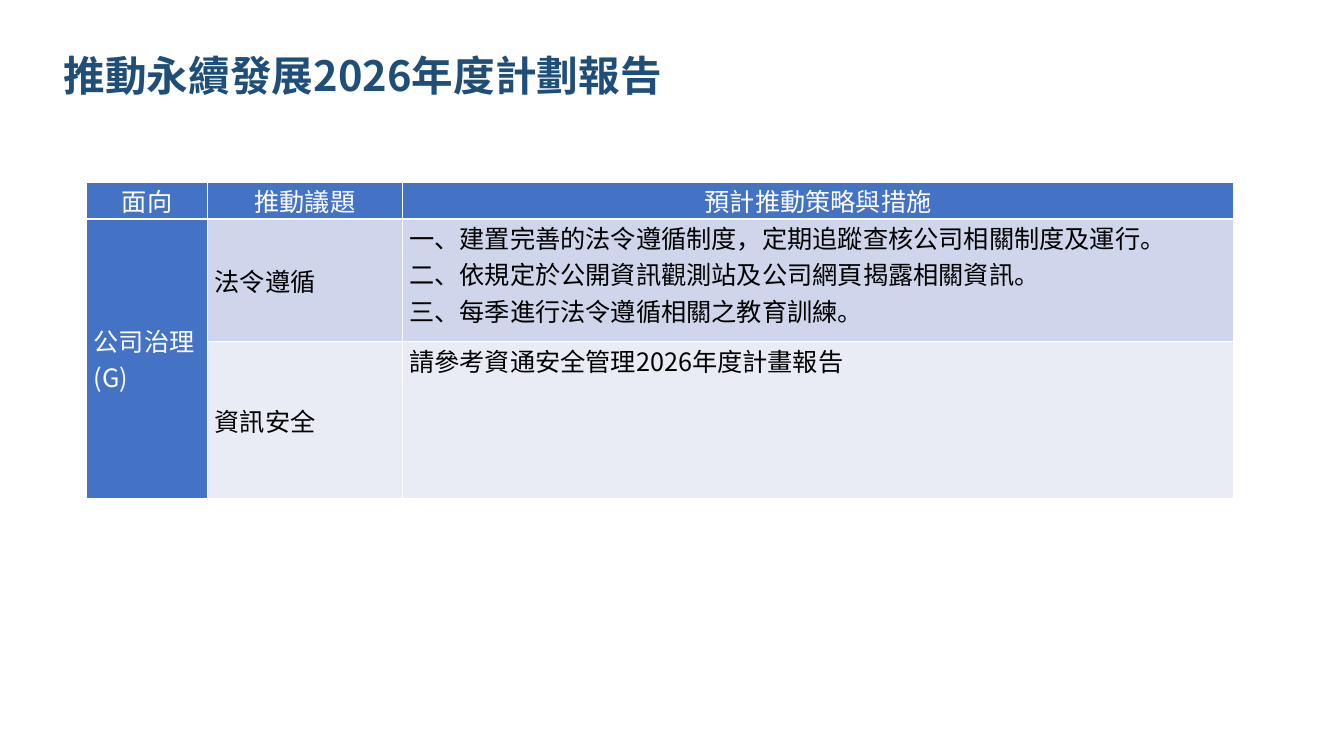
from lxml.etree import SubElement
from pptx import Presentation
from pptx.dml.color import RGBColor
from pptx.enum.text import MSO_ANCHOR as ANCHOR, MSO_AUTO_SIZE as AUTO, PP_ALIGN as ALIGN
from pptx.oxml.ns import qn
from pptx.util import Inches, Pt

FONT = "Noto Sans CJK SC"
WHITE, BLACK, NAVY, BLUE = "FFFFFF", "000000", "1F4E79", "4472C4"
COLUMNS = (1.2, 1.93, 8.25)
ROWS = (0.32, 1.22, 1.55)
BANDS = (BLUE, "CFD5EA", "E9EBF5")
CONTENT = (
    ("面向", "推動議題", "預計推動策略與措施"),
    ("公司治理(G)", "法令遵循",
     "一、建置完善的法令遵循制度，定期追蹤查核公司相關制度及運行。\n"
     "二、依規定於公開資訊觀測站及公司網頁揭露相關資訊。\n"
     "三、每季進行法令遵循相關之教育訓練。"),
    ("", "資訊安全", "請參考資通安全管理2026年度計畫報告"),
)


def rgb(color):
    return RGBColor.from_string(color)


def write(tf, text, size=18, color=BLACK, bold=False, align=ALIGN.LEFT, spacing=1.0):
    tf.text = text
    for p in tf.paragraphs:
        p.alignment = align
        p.line_spacing = spacing
        for r in p.runs:
            r.font.size = Pt(size)
            r.font.bold = bold
            r.font.name = FONT
            r.font.color.rgb = rgb(color)
            SubElement(r.font._element, qn("a:ea"), typeface=FONT)


def add_title(slide, text):
    sp = slide.shapes.title
    sp.left, sp.top, sp.width, sp.height = map(Inches, (0.53, 0.41, 12.28, 0.72))
    tf = sp.text_frame
    tf.auto_size = AUTO.NONE
    tf.word_wrap = True
    tf.vertical_anchor = ANCHOR.MIDDLE
    write(tf, text, size=29.7, color=NAVY, bold=True, spacing=0.9)


def set_borders(cell, color, width):
    tcPr = cell._tc.get_or_add_tcPr()
    for i, side in enumerate(("lnL", "lnR", "lnT", "lnB")):
        ln = tcPr.makeelement(qn(f"a:{side}"), {"w": str(Pt(width))})
        SubElement(SubElement(ln, qn("a:solidFill")), qn("a:srgbClr"), val=color)
        tcPr.insert(i, ln)


def format_cell(cell, text, row, col):
    header = row == 0
    blue = header or col == 0
    cell.margin_left = cell.margin_right = Inches(0.07)
    cell.margin_top = cell.margin_bottom = 0
    cell.vertical_anchor = ANCHOR.TOP if header or col == 2 else ANCHOR.MIDDLE
    cell.fill.solid()
    cell.fill.fore_color.rgb = rgb(BLUE if blue else BANDS[row])
    set_borders(cell, WHITE, 1)
    write(cell.text_frame, text, color=WHITE if blue else BLACK,
          align=ALIGN.CENTER if header else ALIGN.LEFT)


def add_plan_table(slide):
    table = slide.shapes.add_table(
        len(ROWS), len(COLUMNS), Inches(0.86), Inches(1.81),
        Inches(sum(COLUMNS)), Inches(sum(ROWS))).table
    for column, width in zip(table.columns, COLUMNS):
        column.width = Inches(width)
    for row, height in zip(table.rows, ROWS):
        row.height = Inches(height)
    for i, texts in enumerate(CONTENT):
        for j, text in enumerate(texts):
            format_cell(table.cell(i, j), text, i, j)
    table.cell(1, 0).merge(table.cell(2, 0))


def main():
    prs = Presentation()
    prs.slide_width, prs.slide_height = Inches(13.33), Inches(7.5)
    slide = prs.slides.add_slide(prs.slide_layouts[5])
    add_title(slide, "推動永續發展2026年度計劃報告")
    add_plan_table(slide)
    prs.save("out.pptx")


if __name__ == "__main__":
    main()
